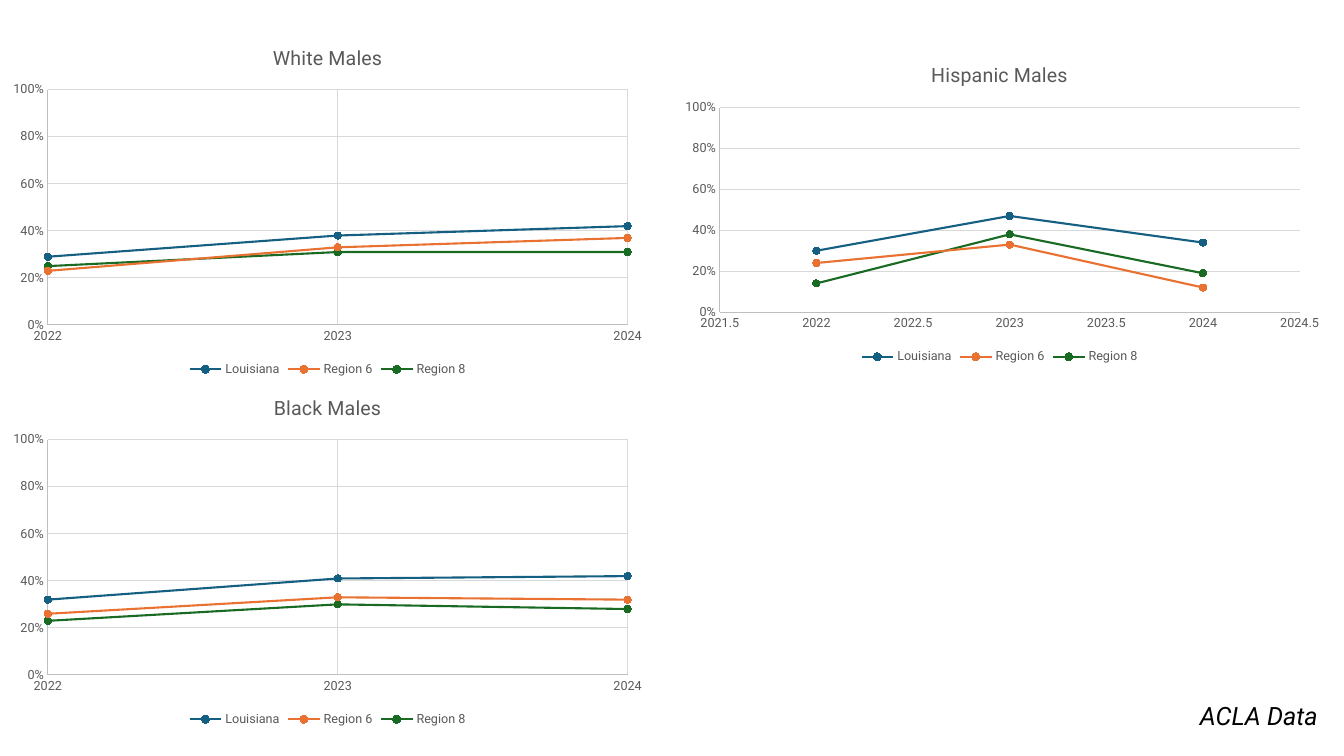
import pptx
import pptx.chart.data
import pptx.dml.color
import pptx.enum.chart
import pptx.enum.text
import pptx.oxml
import pptx.oxml.ns
import pptx.util

Pt = pptx.util.Pt
RGBColor = pptx.dml.color.RGBColor

FONT = "Roboto"
BLACK = RGBColor(0x00, 0x00, 0x00)
GREY = RGBColor(0x59, 0x59, 0x59)
AXIS = RGBColor(0xBF, 0xBF, 0xBF)
GRID = RGBColor(0xD9, 0xD9, 0xD9)
BLUE = RGBColor(0x15, 0x60, 0x82)
ORANGE = RGBColor(0xE9, 0x71, 0x32)
GREEN = RGBColor(0x19, 0x6B, 0x24)

YEARS = (2022, 2023, 2024)
REGIONS = (("Louisiana", BLUE), ("Region 6", ORANGE), ("Region 8", GREEN))
FULL_YEARS = (2022, 2024, 1)
HALF_YEARS = (2021.5, 2024.5, 0.5)
PANELS = (
    ("White Males", (0, 20, 468, 252), FULL_YEARS, True,
     ((0.29, 0.38, 0.42), (0.23, 0.33, 0.37), (0.25, 0.31, 0.31))),
    ("Black Males", (0, 270, 468, 252), FULL_YEARS, True,
     ((0.32, 0.41, 0.42), (0.26, 0.33, 0.32), (0.23, 0.30, 0.28))),
    ("Hispanic Males", (480, 33, 468, 230), HALF_YEARS, False,
     ((0.30, 0.47, 0.34), (0.24, 0.33, 0.12), (0.14, 0.38, 0.19))),
)


def format_font(font, size, color, italic=False):
    """Apply the deck font with a size and colour."""
    font.name = FONT
    font.size = Pt(size)
    font.bold = False
    font.italic = italic
    font.color.rgb = color


def write_text(tf, text, **fmt):
    """Write one formatted run into a text frame."""
    r = tf.paragraphs[0].add_run()
    r.text = text
    format_font(r.font, **fmt)


def format_line(line, color, width):
    """Give a line a solid colour and a width."""
    line.color.rgb = color
    line.width = Pt(width)


def format_axis(axis, scale, number_format, grid):
    """Set scale, labels, line and gridlines of an axis."""
    axis.minimum_scale, axis.maximum_scale, axis.major_unit = scale
    axis.major_tick_mark = pptx.enum.chart.XL_TICK_MARK.NONE
    axis.minor_tick_mark = pptx.enum.chart.XL_TICK_MARK.NONE
    axis.tick_labels.number_format = number_format
    axis.tick_labels.number_format_is_linked = False
    format_font(axis.tick_labels.font, 9, GREY)
    format_line(axis.format.line, AXIS, 0.75)
    axis.has_major_gridlines = grid
    if grid:
        format_line(axis.major_gridlines.format.line, GRID, 0.75)


def place_plot(chart, width, height, left=34, top=44, right=20, bottom=40):
    """Place the inner plot area by its margins in the chart box."""
    area = chart._chartSpace.xpath("c:chart/c:plotArea")[0]
    for old in area.xpath("c:layout"):
        area.remove(old)
    parts = (("x", left / width), ("y", top / height),
             ("w", (width - left - right) / width),
             ("h", (height - top - bottom) / height))
    values = "".join(f'<c:{tag} val="{value:.3f}"/>' for tag, value in parts)
    area.insert(0, pptx.oxml.parse_xml(
        f'<c:layout {pptx.oxml.ns.nsdecls("c")}><c:manualLayout>'
        '<c:layoutTarget val="inner"/><c:xMode val="edge"/>'
        f'<c:yMode val="edge"/>{values}</c:manualLayout></c:layout>'))


def add_panel(s, title, box, years, year_grid, rates):
    """Add one titled chart of regional rates by year."""
    data = pptx.chart.data.XyChartData(number_format="0%")
    for (name, _), values in zip(REGIONS, rates):
        series = data.add_series(name)
        for year, value in zip(YEARS, values):
            series.add_data_point(year, value)
    chart = s.shapes.add_chart(
        pptx.enum.chart.XL_CHART_TYPE.XY_SCATTER_LINES,
        *map(Pt, box), data).chart
    format_font(chart.font, 10, BLACK)
    chart.has_title = True
    write_text(chart.chart_title.text_frame, title, size=14, color=GREY)
    chart.has_legend = True
    chart.legend.position = pptx.enum.chart.XL_LEGEND_POSITION.BOTTOM
    chart.legend.include_in_layout = False
    format_font(chart.legend.font, 9, GREY)
    format_axis(chart.category_axis, years, "General", year_grid)
    format_axis(chart.value_axis, (0, 1, 0.2), "0%", True)
    chart.plots[0].vary_by_categories = False
    for series, (_, color) in zip(chart.plots[0].series, REGIONS):
        series.smooth = False
        format_line(series.format.line, color, 1.5)
        series.marker.style = pptx.enum.chart.XL_MARKER_STYLE.CIRCLE
        series.marker.size = 5
        series.marker.format.fill.solid()
        series.marker.format.fill.fore_color.rgb = color
        format_line(series.marker.format.line, color, 0.75)
    place_plot(chart, *box[2:])


def add_source(s, box):
    """Add the data source label."""
    tf = s.shapes.add_textbox(*map(Pt, box)).text_frame
    tf.word_wrap = True
    tf.auto_size = pptx.enum.text.MSO_AUTO_SIZE.SHAPE_TO_FIT_TEXT
    write_text(tf, "ACLA Data", size=18, color=BLACK, italic=True)


def main():
    """Build and save the slide."""
    prs = pptx.Presentation()
    prs.slide_width, prs.slide_height = Pt(960), Pt(540)
    s = prs.slides.add_slide(prs.slide_layouts.get_by_name("Blank"))
    for panel in PANELS:
        add_panel(s, *panel)
    add_source(s, (850, 497, 110, 29))
    prs.save("out.pptx")


if __name__ == "__main__":
    main()
